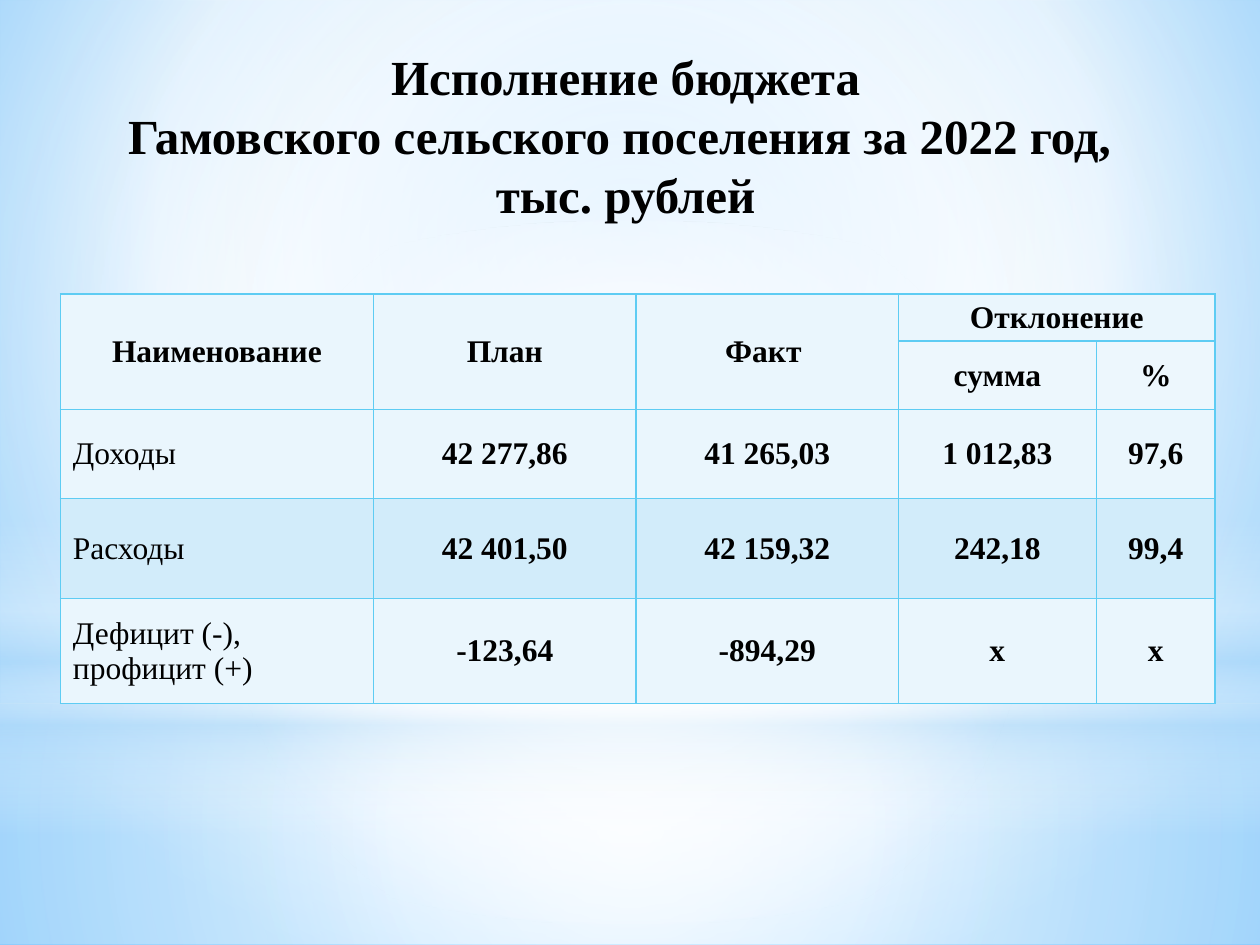
import lxml.etree
import pptx
import pptx.dml.color
import pptx.enum.shapes
import pptx.enum.text
import pptx.oxml.ns
import pptx.util

Pt = pptx.util.Pt
qn = pptx.oxml.ns.qn
ALIGN = pptx.enum.text.PP_ALIGN
MIDDLE = pptx.enum.text.MSO_ANCHOR.MIDDLE
SHAPE = pptx.enum.shapes.MSO_SHAPE
COLORS = {
    "text": "000000", "border": "5ECCF3", "white": "FFFFFF", "mist": "B4DCFA",
    "sky": "9ED5FF", "deep": "5BB9FF", "plain": "EAF6FD", "sub": "EDF7FD", "band": "D2ECFA",
}


class Painter:
    """Holds the text style and the current page and adds each kind of element."""

    def __init__(self, page, font="Times New Roman"):
        self.page = page
        self.font = font

    def gradient(self, fill, owner, stops, focus=None):
        fill.gradient()
        grad = next(owner.iter(qn("a:gradFill")))
        for child in list(grad):
            grad.remove(child)
        stop_list = lxml.etree.SubElement(grad, qn("a:gsLst"))
        for position, color, opacity in stops:
            stop = lxml.etree.SubElement(stop_list, qn("a:gs"), pos=str(position * 1000))
            tint = lxml.etree.SubElement(stop, qn("a:srgbClr"), val=COLORS[color])
            if opacity < 100:
                lxml.etree.SubElement(tint, qn("a:alpha"), val=str(opacity * 1000))
        if focus:
            route = lxml.etree.SubElement(grad, qn("a:path"), path="circle")
            sides = {side: str(value * 1000) for side, value in zip("ltrb", focus)}
            lxml.etree.SubElement(route, qn("a:fillToRect"), **sides)
        else:
            lxml.etree.SubElement(grad, qn("a:lin"), ang="5400000", scaled="0")

    def background(self, stops, focus):
        self.gradient(self.page.background.fill, self.page.element, stops, focus)

    def glow(self, kind, top, height, stops, focus=None):
        shape = self.page.shapes.add_shape(kind, Pt(0), Pt(top), Pt(720), Pt(height))
        shape.shadow.inherit = False
        shape.line.fill.background()
        self.gradient(shape.fill, shape.element, stops, focus)

    def span(self, para, text, size, bold=True):
        span = para.add_run()
        span.text = text
        span.font.name = self.font
        span.font.size = Pt(size)
        span.font.bold = bold
        span.font.color.rgb = pptx.dml.color.RGBColor.from_string(COLORS["text"])

    def title(self, left, top, width, height, paragraphs, size):
        box = self.page.shapes.add_textbox(Pt(left), Pt(top), Pt(width), Pt(height))
        frame = box.text_frame
        frame.word_wrap = True
        frame.vertical_anchor = MIDDLE
        for index, lines in enumerate(paragraphs):
            para = frame.add_paragraph() if index else frame.paragraphs[0]
            para.alignment = ALIGN.CENTER
            for number, line in enumerate(lines):
                if number:
                    para.add_line_break()
                self.span(para, line, size)

    def style_cell(self, cell, fill):
        properties = cell._tc.get_or_add_tcPr()
        for side in ("lnL", "lnR", "lnT", "lnB"):
            line = lxml.etree.SubElement(properties, qn("a:" + side), w=str(Pt(1)))
            solid = lxml.etree.SubElement(line, qn("a:solidFill"))
            lxml.etree.SubElement(solid, qn("a:srgbClr"), val=COLORS["border"])
        cell.fill.solid()
        cell.fill.fore_color.rgb = pptx.dml.color.RGBColor.from_string(COLORS[fill])
        cell.vertical_anchor = MIDDLE
        cell.margin_top = cell.margin_bottom = Pt(3)

    def table(self, left, top, widths, heights, rows, fills, merges, header_rows, size):
        frame = self.page.shapes.add_table(
            len(heights), len(widths), Pt(left), Pt(top), Pt(sum(widths)), Pt(sum(heights)))
        table = frame.table
        table.first_row = table.horz_banding = False
        for column, width in zip(table.columns, widths):
            column.width = Pt(width)
        for row, height in zip(table.rows, heights):
            row.height = Pt(height)
        for first, last in merges:
            table.cell(*first).merge(table.cell(*last))
        for r, (texts, fill) in enumerate(zip(rows, fills)):
            for c, text in enumerate(texts):
                cell = table.cell(r, c)
                self.style_cell(cell, fill)
                if text:
                    label = c == 0 and r >= header_rows
                    para = cell.text_frame.paragraphs[0]
                    para.alignment = ALIGN.LEFT if label else ALIGN.CENTER
                    self.span(para, text, size, bold=not label)


def main():
    deck = pptx.Presentation()
    deck.slide_width, deck.slide_height = Pt(720), Pt(540)
    painter = Painter(deck.slides.add_slide(deck.slide_layouts[6]))

    center = (50, 50, 50, 50)
    painter.background([(0, "sky", 100), (60, "white", 100), (100, "deep", 100)], (20, 10, 20, 60))
    painter.glow(SHAPE.RECTANGLE, 402, 138,
                 [(0, "white", 91), (37, "white", 76), (100, "mist", 79)], center)
    painter.glow(SHAPE.RECTANGLE, 0, 402,
                 [(0, "white", 89), (48, "white", 62), (100, "mist", 79)], center)
    painter.glow(SHAPE.RECTANGLE, 297, 180,
                 [(0, "white", 0), (29, "white", 30), (45, "mist", 40),
                  (55, "white", 26), (65, "mist", 60), (100, "white", 0)])
    painter.glow(SHAPE.OVAL, 126, 402, [(0, "white", 100), (56, "white", 0)], center)

    painter.table(
        left=34.5, top=168, widths=[179, 150, 150, 113, 68], heights=[27, 39, 51, 57, 60],
        rows=[
            ["Наименование", "План", "Факт ", "Отклонение", ""],
            ["", "", "", "сумма", "%"],
            ["Доходы", "42 277,86", "41 265,03", "1 012,83", "97,6"],
            ["Расходы", "42 401,50", "42 159,32", "242,18", "99,4"],
            ["Дефицит (-), профицит (+)", "-123,64", "-894,29", "х", "х"],
        ],
        fills=["plain", "sub", "plain", "band", "plain"],
        merges=[((0, c), (1, c)) for c in range(3)] + [((0, 3), (0, 4))],
        header_rows=2, size=18)
    painter.title(8.5, 24, 698, 106.5, [
        [" Исполнение бюджета ", "Гамовского сельского поселения за 2022 год, "],
        ["тыс. рублей"],
    ], 28)
    deck.save("out.pptx")


if __name__ == "__main__":
    main()
